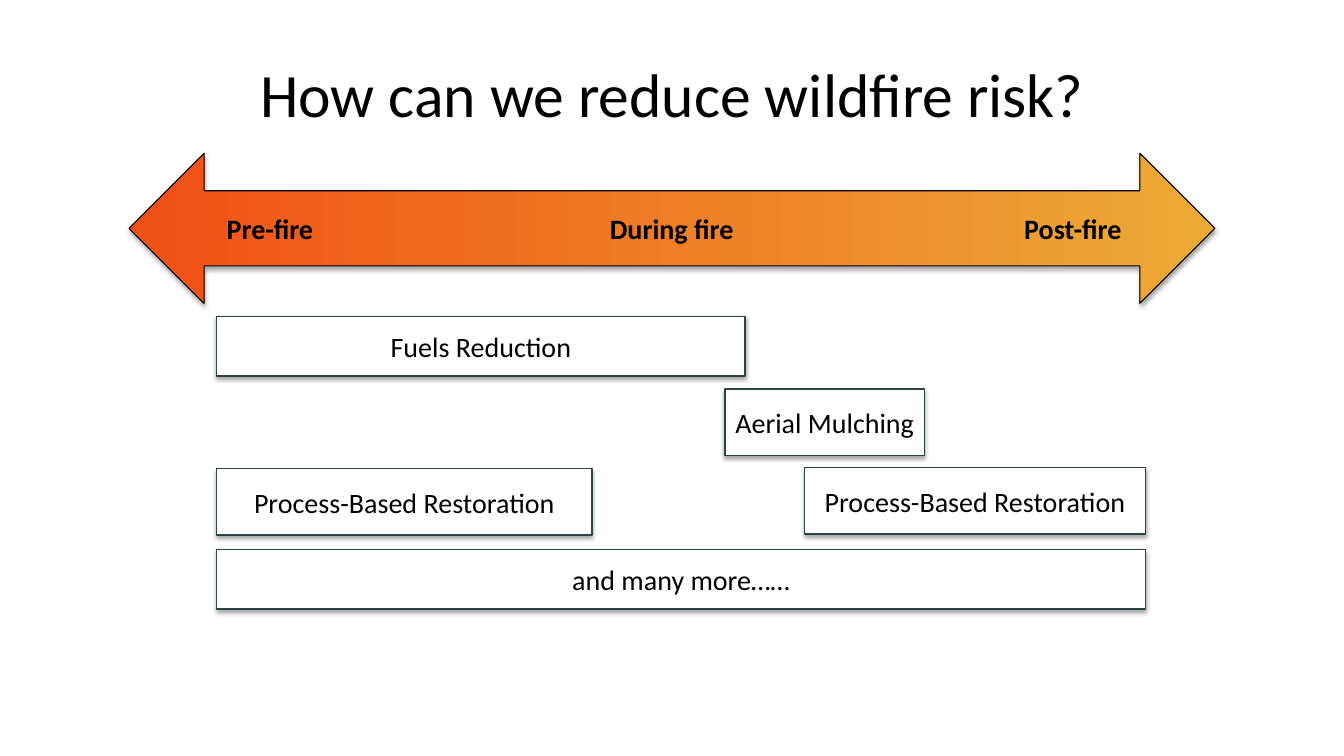
from lxml.etree import SubElement
from pptx import Presentation
from pptx.dml.color import RGBColor
from pptx.enum.shapes import MSO_SHAPE
from pptx.enum.text import MSO_ANCHOR, PP_ALIGN
from pptx.oxml.ns import qn
from pptx.util import Pt

PIXEL = 9144
BLACK = RGBColor(0x00, 0x00, 0x00)
WHITE = RGBColor(0xFF, 0xFF, 0xFF)
SLATE = RGBColor(0x2C, 0x42, 0x44)
FLAME = RGBColor(0xF1, 0x50, 0x17)
AMBER = RGBColor(0xEC, 0xAB, 0x36)

PHASES = [("Pre-fire", 87), ("During fire", 467), ("Post-fire", 878)]
ACTIONS = [
    ("Fuels Reduction", 0, 0, 524, 59),
    ("Aerial Mulching", 504, 72, 198, 66),
    ("Process-Based Restoration", 583, 150, 338, 66),
    ("Process-Based Restoration", 0, 151, 372, 66),
    ("and many more……", 0, 231, 921, 59),
]


def pixels(*lengths):
    return [length * PIXEL for length in lengths]


def write_text(shape, text, size=20, bold=False, align=PP_ALIGN.CENTER,
               anchor=MSO_ANCHOR.MIDDLE, margin=10):
    frame = shape.text_frame
    frame.word_wrap = True
    frame.vertical_anchor = anchor
    frame.margin_left = frame.margin_right = margin * PIXEL
    paragraph = frame.paragraphs[0]
    paragraph.alignment = align
    run = paragraph.add_run()
    run.text = text
    run.font.name = "Calibri"
    run.font.size = Pt(size)
    run.font.bold = bold
    run.font.color.rgb = BLACK


def add_shadow(shape):
    shape.shadow.inherit = False
    effects = shape._element.spPr.find(qn("a:effectLst"))
    shadow = SubElement(effects, qn("a:outerShdw"), blurRad="40000", dist="23000",
                        dir="5400000", rotWithShape="0")
    color = SubElement(shadow, qn("a:srgbClr"), val=str(BLACK))
    SubElement(color, qn("a:alpha"), val="35000")


def add_outlined_shape(slide, kind, box, color, width):
    shape = slide.shapes.add_shape(kind, *pixels(*box))
    shape.line.color.rgb = color
    shape.line.width = Pt(width)
    add_shadow(shape)
    return shape


def add_title(slide, box):
    title = slide.shapes.add_textbox(*pixels(*box))
    write_text(title, "How can we reduce wildfire risk?", size=44)


def add_timeline(slide, box):
    left, top, width, height = box
    arrow = add_outlined_shape(slide, MSO_SHAPE.LEFT_RIGHT_ARROW, box, BLACK, 0.75)
    arrow.fill.gradient()
    arrow.fill.gradient_angle = 0
    for stop, color in zip(arrow.fill.gradient_stops, (FLAME, AMBER)):
        stop.color.rgb = color
    for phase, offset in PHASES:
        label = slide.shapes.add_textbox(*pixels(left + offset, top + 53, 158, 44))
        write_text(label, phase, bold=True, align=PP_ALIGN.LEFT, anchor=MSO_ANCHOR.TOP)


def add_actions(slide, left, top):
    for text, across, down, width, height in ACTIONS:
        box = (left + across, top + down, width, height)
        action = add_outlined_shape(slide, MSO_SHAPE.RECTANGLE, box, SLATE, 1)
        action.fill.solid()
        action.fill.fore_color.rgb = WHITE
        write_text(action, text, margin=5)


def main():
    presentation = Presentation()
    presentation.slide_width, presentation.slide_height = pixels(1333, 750)
    slide = presentation.slides.add_slide(presentation.slide_layouts[6])
    add_title(slide, (67, 30, 1200, 125))
    add_timeline(slide, (128, 152, 1077, 149))
    add_actions(slide, 215, 314)
    presentation.save("out.pptx")


if __name__ == "__main__":
    main()
